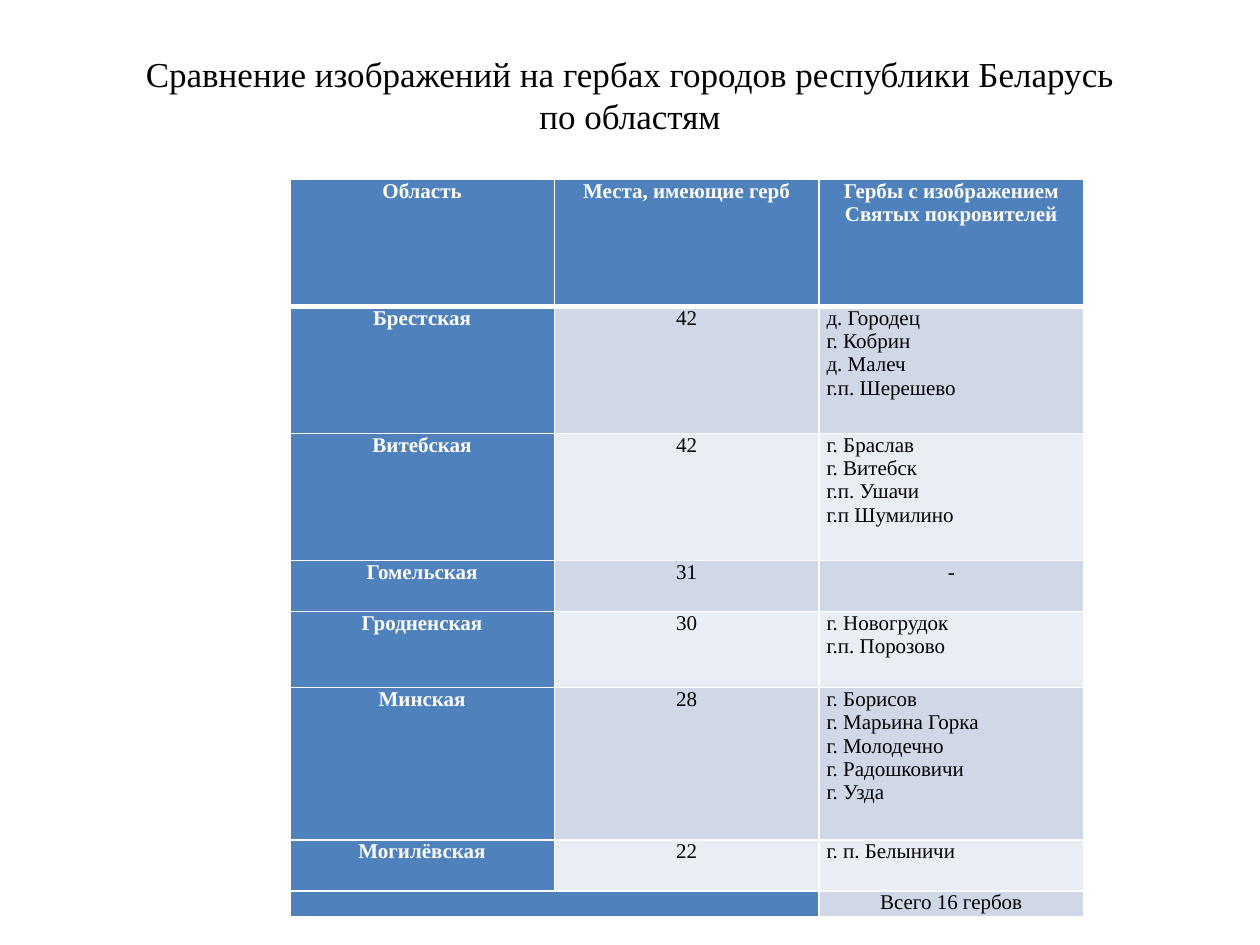
from dataclasses import dataclass

from lxml import etree
from pptx import Presentation
from pptx.dml.color import RGBColor
from pptx.enum.text import MSO_ANCHOR, PP_ALIGN
from pptx.oxml.ns import qn
from pptx.util import Inches, Pt

LEFT, CENTER = PP_ALIGN.LEFT, PP_ALIGN.CENTER
MIDDLE = MSO_ANCHOR.MIDDLE
BLANK_LAYOUT = 6

TITLE = "Сравнение изображений на гербах городов республики Беларусь\vпо областям"
HEADINGS = ["Область", "Места, имеющие герб", "Гербы с изображением Святых покровителей"]
# region, places with a coat of arms, places showing patron saints, row height in text lines
REGIONS = [
    ("Брестская", 42, ["д. Городец", "г. Кобрин", "д. Малеч", "г.п. Шерешево"], 5),
    ("Витебская", 42, ["г. Браслав", "г. Витебск", "г.п. Ушачи", "г.п Шумилино"], 5),
    ("Гомельская", 31, [], 2),
    ("Гродненская", 30, ["г. Новогрудок", "г.п. Порозово"], 3),
    ("Минская", 28, ["г. Борисов", "г. Марьина Горка", "г. Молодечно",
                     "г. Радошковичи", "г. Узда"], 6),
    ("Могилёвская", 22, ["г. п. Белыничи"], 2),
]
TOTAL = "Всего 16 гербов"
HEADER_LINES, TOTAL_LINES = 5, 1


@dataclass(frozen=True)
class Theme:
    font: str = "Times New Roman"
    title_size: int = 20
    table_size: int = 12
    text: str = "000000"
    accent: str = "4F81BD"
    on_accent: str = "FFFFFF"
    bands: tuple = ("D0D8E8", "E9EDF4")
    border: str = "FFFFFF"
    thin: int = 1
    thick: int = 3


class SlideBuilder:
    def __init__(self, presentation, theme):
        self.theme = theme
        self.width = presentation.slide_width
        self.height = presentation.slide_height
        self.slide = presentation.slides.add_slide(presentation.slide_layouts[BLANK_LAYOUT])

    def area(self, left, top, width, height):
        """Turn shares of the slide into lengths."""
        return (int(left * self.width), int(top * self.height),
                int(width * self.width), int(height * self.height))

    def set_text(self, frame, text, size, color, bold=False, align=CENTER):
        frame.text = text
        for paragraph in frame.paragraphs:
            paragraph.alignment = align
            for run in paragraph.runs:
                run.font.name = self.theme.font
                run.font.size = Pt(size)
                run.font.bold = bold
                run.font.color.rgb = RGBColor.from_string(color)
            if not paragraph.runs:  # an empty cell must not outgrow its row
                etree.SubElement(paragraph._p, qn("a:endParaRPr"), sz=str(size * 100))

    def title(self, text, area):
        frame = self.slide.shapes.add_textbox(*self.area(*area)).text_frame
        frame.word_wrap = True
        frame.vertical_anchor = MIDDLE
        self.set_text(frame, text, self.theme.title_size, self.theme.text)

    def table(self, area, row_lines, column_count):
        """Add a table with equal columns and rows measured in text lines."""
        left, top, width, height = self.area(*area)
        table = self.slide.shapes.add_table(
            len(row_lines), column_count, left, top, width, height).table
        for column in table.columns:
            column.width = width // column_count
        for row, lines in zip(table.rows, row_lines):
            row.height = height * lines // sum(row_lines)
        return table

    def borders(self, cell, top, bottom):
        properties = cell._tc.get_or_add_tcPr()
        thin = self.theme.thin
        for side, points in (("L", thin), ("R", thin), ("T", top), ("B", bottom)):
            line = etree.SubElement(properties, qn(f"a:ln{side}"), w=str(Pt(points)))
            fill = etree.SubElement(line, qn("a:solidFill"))
            etree.SubElement(fill, qn("a:srgbClr"), val=self.theme.border)

    def cell(self, cell, text, band=None, align=CENTER, top=None, bottom=None):
        """Fill a cell; without a band it is a heading on the accent colour."""
        theme = self.theme
        heading = band is None
        cell.margin_left = cell.margin_right = Inches(0.06)
        cell.margin_top = cell.margin_bottom = 0
        self.borders(cell, top or theme.thin, bottom or theme.thin)
        cell.fill.solid()
        cell.fill.fore_color.rgb = RGBColor.from_string(
            theme.accent if heading else theme.bands[band % 2])
        self.set_text(cell.text_frame, text, theme.table_size,
                      theme.on_accent if heading else theme.text, heading, align)


def main():
    presentation = Presentation()
    presentation.slide_width, presentation.slide_height = Inches(10), Inches(7.5)
    theme = Theme()
    builder = SlideBuilder(presentation, theme)
    builder.title(TITLE, (0.05, 0.04, 0.9, 0.12))

    row_lines = [HEADER_LINES, *(region[-1] for region in REGIONS), TOTAL_LINES]
    table = builder.table((0.23, 0.19, 0.63, 0.78), row_lines, len(HEADINGS))
    for column, heading in enumerate(HEADINGS):
        builder.cell(table.cell(0, column), heading, bottom=theme.thick)

    for band, (region, count, places, _) in enumerate(REGIONS):
        name_cell, count_cell, places_cell = table.rows[band + 1].cells
        top = theme.thin if band else theme.thick
        builder.cell(name_cell, region, top=top)
        builder.cell(count_cell, str(count), band, top=top)
        builder.cell(places_cell, "\n".join(places) or "-", band,
                     LEFT if places else CENTER, top=top)

    blank, covered, total = table.rows[len(REGIONS) + 1].cells
    builder.cell(blank, "")
    builder.cell(covered, "")
    blank.merge(covered)
    builder.cell(total, TOTAL, len(REGIONS))
    presentation.save("out.pptx")


if __name__ == "__main__":
    main()
